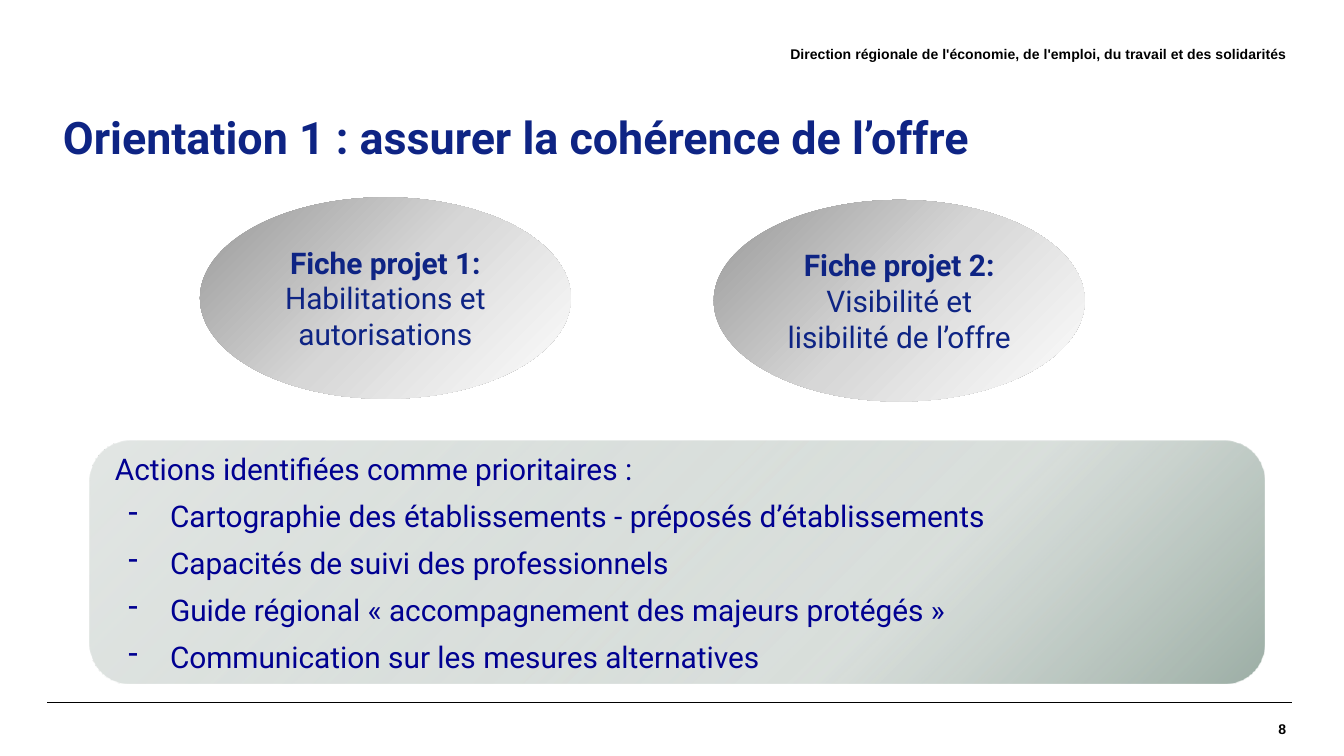
"""Build the slide on orientation 1: two project sheets and their priority actions."""
from copy import deepcopy
from dataclasses import dataclass

from lxml.etree import SubElement
from pptx import Presentation
from pptx.dml.color import RGBColor as Rgb
from pptx.enum.shapes import MSO_AUTO_SHAPE_TYPE as Preset, MSO_CONNECTOR_TYPE as Link
from pptx.enum.text import MSO_VERTICAL_ANCHOR as Anchor, PP_PARAGRAPH_ALIGNMENT as Align
from pptx.oxml.ns import qn
from pptx.util import Cm, Pt


@dataclass(frozen=True)
class Theme:
    heading_font: str = "Roboto"
    furniture_font: str = "Arial"
    ink: str = "000000"
    navy: str = "0E2484"
    blue: str = "000091"
    title_size: float = 24
    body_size: float = 16
    furniture_size: float = 7.5
    rule_width: float = 0.8
    silver: tuple = ((0, "979797", 100), (50, "D7D7D7", 100), (100, "FFFFFF", 100))
    sage: tuple = ((0, "9CAEA5", 100), (32, "C4CDC8", 64), (100, "E2E6E4", 100))


THEME = Theme()
PROJECTS = (
    ("Fiche projet 1: ", "Habilitations et autorisations", 3.78, 3.73),
    ("Fiche projet 2: ", "Visibilité et lisibilité de l’offre", 13.49, 3.78),
)
ACTIONS = (
    "Cartographie des établissements - préposés d’établissements",
    "Capacités de suivi des professionnels",
    "Guide régional « accompagnement des majeurs protégés »",
    "Communication sur les mesures alternatives",
)


def add_run(paragraph, text, size, color, bold=False, family=THEME.heading_font):
    run = paragraph.add_run()
    run.text = text
    run.font.name = family
    run.font.size = Pt(size)
    run.font.bold = bold
    run.font.color.rgb = Rgb.from_string(color)


def add_text_box(slide, left, top, width, height):
    frame = slide.shapes.add_textbox(Cm(left), Cm(top), Cm(width), Cm(height)).text_frame
    frame.word_wrap = True
    frame.vertical_anchor = Anchor.MIDDLE
    return frame


def add_title(slide, text):
    paragraph = add_text_box(slide, 0.89, 1.9, 23.4, 1.5).paragraphs[0]
    paragraph.line_spacing = 0.9
    paragraph._p.get_or_add_pPr().set("marL", str(Cm(0.05)))
    add_run(paragraph, text, THEME.title_size, THEME.navy, bold=True)


def add_furniture(slide, text, left, top, width):
    frame = add_text_box(slide, left, top, width, 0.99)
    frame.margin_left = frame.margin_right = frame.margin_top = frame.margin_bottom = 0
    paragraph = frame.paragraphs[0]
    paragraph.alignment = Align.RIGHT
    add_run(paragraph, text, THEME.furniture_size, THEME.ink, True, THEME.furniture_font)


def add_rule(slide, left, right, height):
    rule = slide.shapes.add_connector(Link.STRAIGHT, Cm(left), Cm(height), Cm(right), Cm(height))
    rule.line.color.rgb = Rgb.from_string(THEME.ink)
    rule.line.width = Pt(THEME.rule_width)
    SubElement(rule._element.spPr, qn("a:effectLst"))


def fill_gradient(shape, stops, angle):
    shape.fill.gradient()
    shape.fill.gradient_angle = 360 - angle
    stop_list = shape._element.spPr.find(".//" + qn("a:gsLst"))
    stop_list.append(deepcopy(stop_list[-1]))
    for stop, node, (position, color, opacity) in zip(shape.fill.gradient_stops, stop_list, stops):
        stop.position = position / 100
        stop.color.rgb = Rgb.from_string(color)
        if opacity < 100:
            SubElement(node[0], qn("a:alpha"), val=str(opacity * 1000))


def add_panel(slide, preset, left, top, width, height, stops, angle):
    panel = slide.shapes.add_shape(preset, Cm(left), Cm(top), Cm(width), Cm(height))
    panel.shadow.inherit = False
    panel.line.fill.background()
    fill_gradient(panel, stops, angle)
    panel.text_frame.word_wrap = True
    panel.text_frame.vertical_anchor = Anchor.MIDDLE
    return panel.text_frame


def add_project(slide, label, subject, left, top):
    frame = add_panel(slide, Preset.OVAL, left, top, 7.01, 3.81, THEME.silver, 45)
    paragraph = frame.paragraphs[0]
    paragraph.alignment = Align.CENTER
    add_run(paragraph, label, THEME.body_size, THEME.navy, bold=True)
    add_run(paragraph, subject, THEME.body_size, THEME.navy)


def add_actions(slide, intro, actions):
    frame = add_panel(slide, Preset.ROUNDED_RECTANGLE, 1.7, 8.33, 22.2, 4.6, THEME.sage, 225)
    opening = frame.paragraphs[0]
    opening.alignment = Align.LEFT
    add_run(opening, intro, THEME.body_size, THEME.blue)
    for action in actions:
        paragraph = frame.add_paragraph()
        paragraph.alignment = Align.LEFT
        paragraph.space_before = Pt(6)
        properties = paragraph._p.get_or_add_pPr()
        properties.set("marL", str(Cm(1.04)))
        properties.set("indent", str(Cm(-0.79)))
        SubElement(properties, qn("a:buChar"), char="-")
        add_run(paragraph, action, THEME.body_size, THEME.blue)


def main():
    deck = Presentation()
    deck.slide_width, deck.slide_height = Cm(25.4), Cm(14.29)
    slide = deck.slides.add_slide(deck.slide_layouts[6])
    add_rule(slide, 0.89, 24.41, 13.28)
    add_furniture(slide, "8", 20.55, 13.28, 3.76)
    add_title(slide, "Orientation 1 : assurer la cohérence de l’offre")
    add_furniture(
        slide,
        "Direction régionale de l'économie, de l'emploi, du travail et des solidarités",
        7.98, 0.53, 16.33,
    )
    for project in PROJECTS:
        add_project(slide, *project)
    add_actions(slide, "Actions identifiées comme prioritaires :", ACTIONS)
    deck.save("out.pptx")


if __name__ == "__main__":
    main()
